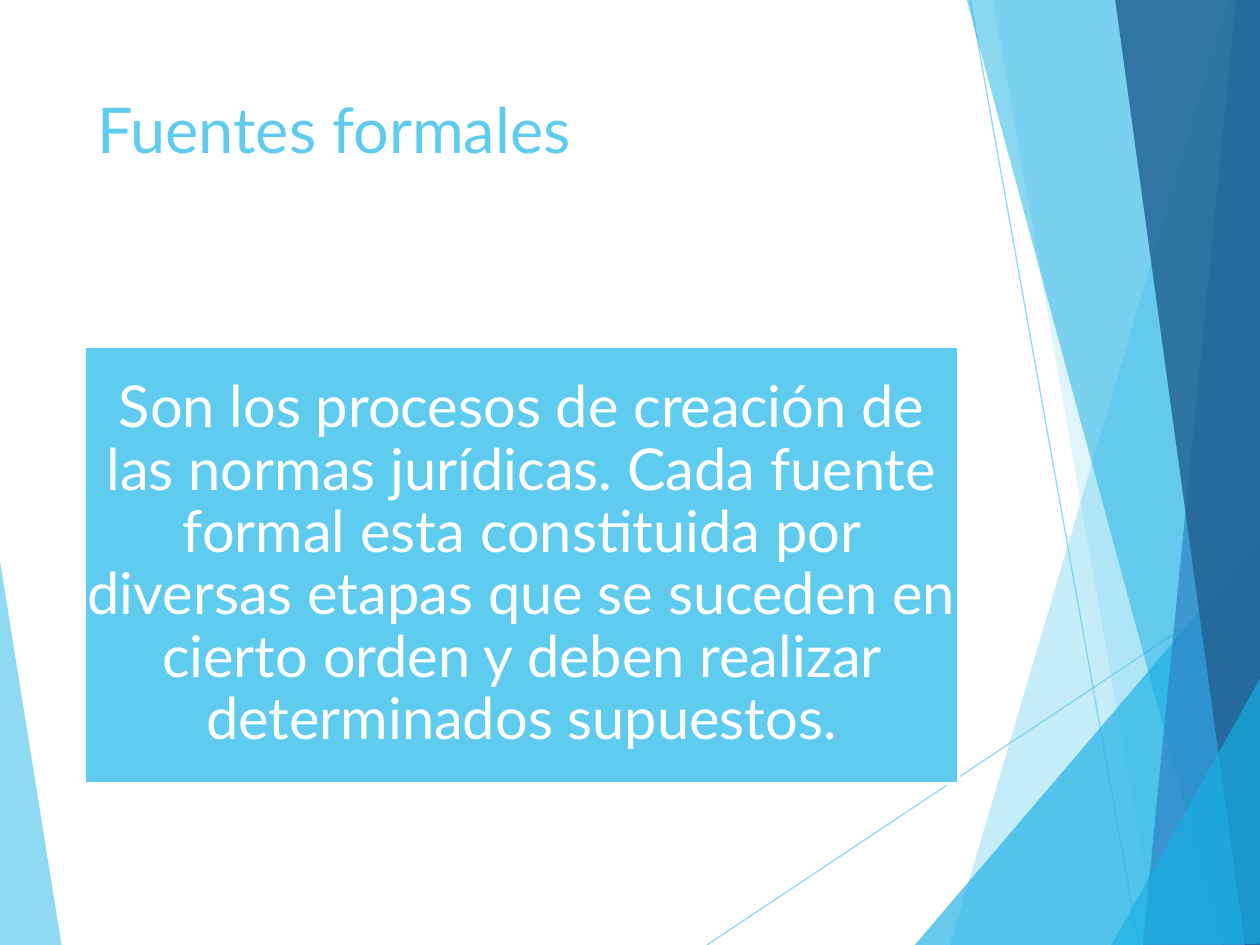
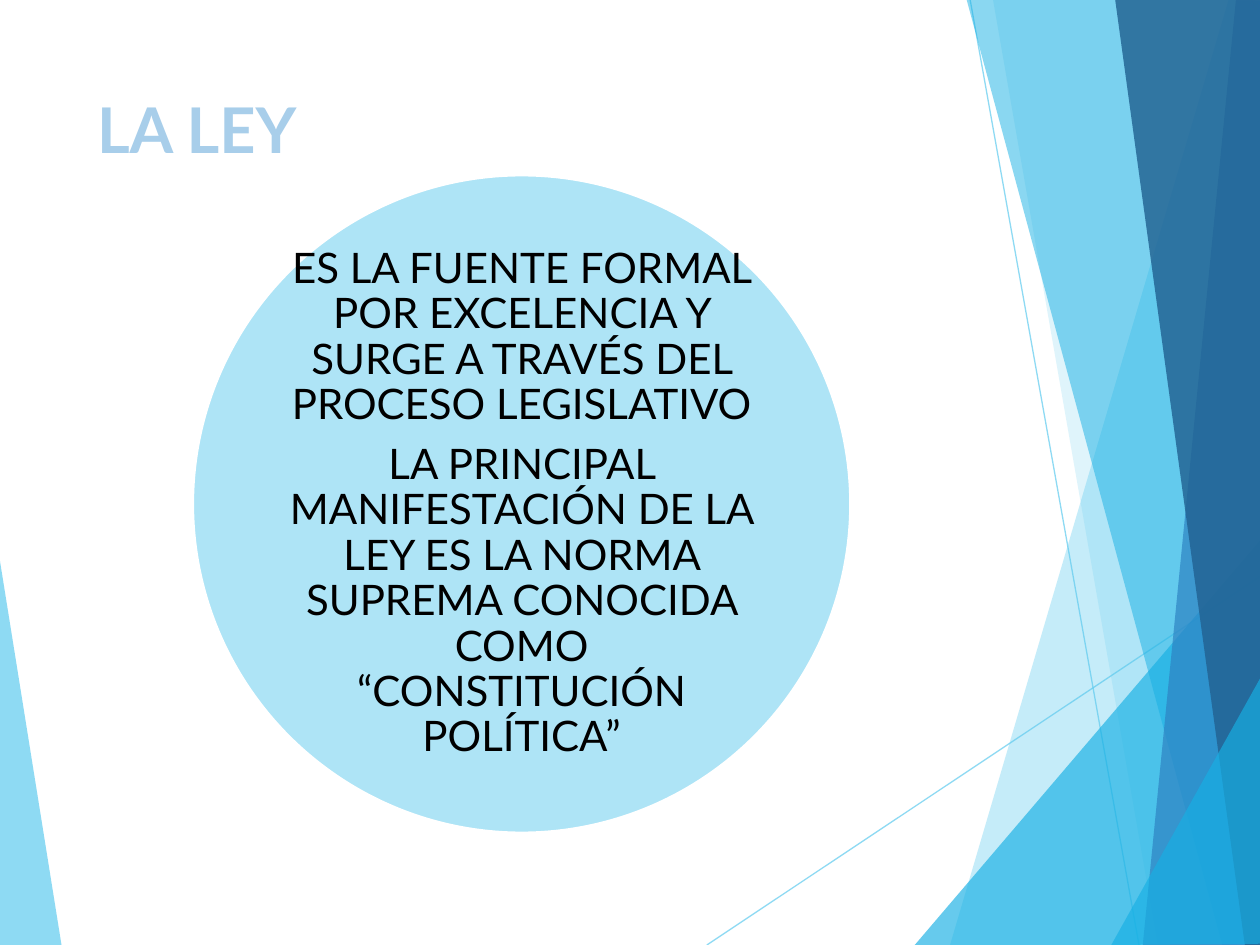
from dataclasses import dataclass

from lxml.etree import SubElement
from pptx import Presentation
from pptx.dml.color import RGBColor
from pptx.enum.shapes import MSO_CONNECTOR as Connector, MSO_SHAPE as Preset
from pptx.enum.text import MSO_ANCHOR as Anchor, PP_ALIGN as Align
from pptx.oxml.ns import qn
from pptx.util import Inches, Pt


@dataclass(frozen=True)
class Theme:
    font: str = "Lato"
    sky: str = "5FCBEF"
    cyan: str = "17B0E4"
    blue: str = "2E83C3"
    navy: str = "226292"
    pale: str = "A8CEEA"
    white: str = "FFFFFF"
    black: str = "000000"
    title_size: int = 36
    statement_size: int = 33
    circle_size: int = 24


theme = Theme()


def paint(color_format, color, opacity=100):
    color_format.rgb = RGBColor.from_string(color)
    if opacity < 100:
        for node in color_format._xFill.iter(qn("a:srgbClr")):
            SubElement(node, qn("a:alpha")).set("val", str(opacity * 1000))


def style_text(paragraph, size, color, bold=False):
    for run in paragraph.runs:
        run.font.name = theme.font
        run.font.size = Pt(size)
        run.font.bold = bold
        run.font.color.rgb = RGBColor.from_string(color)


LEFT_WEDGE = ([(-0.01, 4.39), (0.49, 7.51), (-0.01, 7.5)], theme.sky, 70)
RIGHT_BANDS = [
    ([(9.75, 0), (7.54, 7.5), (10.02, 7.51), (10.01, 0.01)], theme.sky, 36),
    ([(7.88, -0.01), (9.19, 7.5), (10.01, 7.5), (10.01, -0.01)], theme.sky, 20),
    ([(7.26, 7.5), (10, 4.29), (10.01, 7.5)], theme.cyan, 66),
    ([(7.67, -0.01), (9.7, 7.5), (10.01, 7.49), (10.01, -0.01)], theme.cyan, 50),
    ([(9.81, -0.01), (9.07, 7.5), (10.01, 7.5), (10, -0.01)], theme.blue, 70),
    ([(8.85, -0.01), (9.88, 7.5), (10.02, 7.5), (10, -0.01)], theme.navy, 82),
    ([(8.82, 7.5), (10.02, 5.35), (10.02, 7.49)], theme.cyan, 66),
]
THIN_LINES = [(5.61, 7.5, 10.01, 4.57), (7.7, 0, 9.04, 7.5)]

SLIDES = [
    {
        "title": "Fuentes formales",
        "title_color": theme.sky,
        "title_bold": False,
        "preset": Preset.RECTANGLE,
        "place": (0.67, 2.75, 6.94, 3.47),
        "opacity": 100,
        "inset": 0.02,
        "size": theme.statement_size,
        "color": theme.white,
        "text": "Son los procesos de creación de las normas jurídicas. "
                "Cada fuente formal esta constituida por diversas etapas que se "
                "suceden en cierto orden y deben realizar determinados supuestos.",
    },
    {
        "title": "LA LEY",
        "title_color": theme.pale,
        "title_bold": True,
        "preset": Preset.OVAL,
        "place": (1.53, 1.39, 5.22, 5.22),
        "opacity": 50,
        "inset": 0,
        "size": theme.circle_size,
        "color": theme.black,
        "text": "ES LA FUENTE FORMAL POR EXCELENCIA Y SURGE A TRAVÉS DEL "
                "PROCESO LEGISLATIVO\n"
                "LA PRINCIPAL MANIFESTACIÓN DE LA LEY ES LA NORMA SUPREMA "
                "CONOCIDA COMO “CONSTITUCIÓN POLÍTICA”",
    },
]

presentation = Presentation()
presentation.slide_width = Inches(10)
presentation.slide_height = Inches(7.5)
layout = presentation.slide_layouts.get_by_name("Title Only")
slides = [presentation.slides.add_slide(layout) for _ in SLIDES]

decoration = []
for points, color, opacity in [LEFT_WEDGE] + RIGHT_BANDS:
    corners = [(Inches(x), Inches(y)) for x, y in points]
    builder = slides[0].shapes.build_freeform(*corners[0])
    builder.add_line_segments(corners[1:], close=True)
    band = builder.convert_to_shape()
    band.shadow.inherit = False
    band.line.fill.background()
    band.fill.solid()
    paint(band.fill.fore_color, color, opacity)
    decoration.append(band)

thin_lines = []
for ends in THIN_LINES:
    line = slides[0].shapes.add_connector(Connector.STRAIGHT, *map(Inches, ends))
    line.line.width = Pt(0.75)
    line.line.fill.solid()
    paint(line.line.color, theme.sky, 70)
    SubElement(line.element.spPr, qn("a:effectLst"))
    thin_lines.append(line)
decoration[1:1] = thin_lines

for position, shape in enumerate(decoration, start=2):
    layout.shapes.element.insert(position, shape.element)

for slide, content in zip(slides, SLIDES):
    title = slide.shapes.title
    title.left, title.top, title.width, title.height = map(Inches, (0.67, 0.67, 6.94, 1.44))
    title.text_frame.text = content["title"]
    title.text_frame.vertical_anchor = Anchor.TOP
    title.text_frame.paragraphs[0].alignment = Align.LEFT
    style_text(title.text_frame.paragraphs[0], theme.title_size,
               content["title_color"], content["title_bold"])

    panel = slide.shapes.add_shape(content["preset"], *map(Inches, content["place"]))
    panel.shadow.inherit = False
    panel.fill.solid()
    paint(panel.fill.fore_color, theme.sky, content["opacity"])
    panel.line.width = Pt(1.5)
    panel.line.color.rgb = RGBColor.from_string(theme.white)

    frame = panel.text_frame
    frame.word_wrap = True
    frame.vertical_anchor = Anchor.MIDDLE
    inset = Inches(content["inset"])
    frame.margin_left = frame.margin_right = inset
    frame.margin_top = frame.margin_bottom = inset
    frame.text = content["text"]
    for paragraph in frame.paragraphs:
        paragraph.alignment = Align.CENTER
        paragraph.line_spacing = 0.9
        paragraph.space_after = Pt(0.35 * content["size"])
        style_text(paragraph, content["size"], content["color"])

presentation.save("out.pptx")
